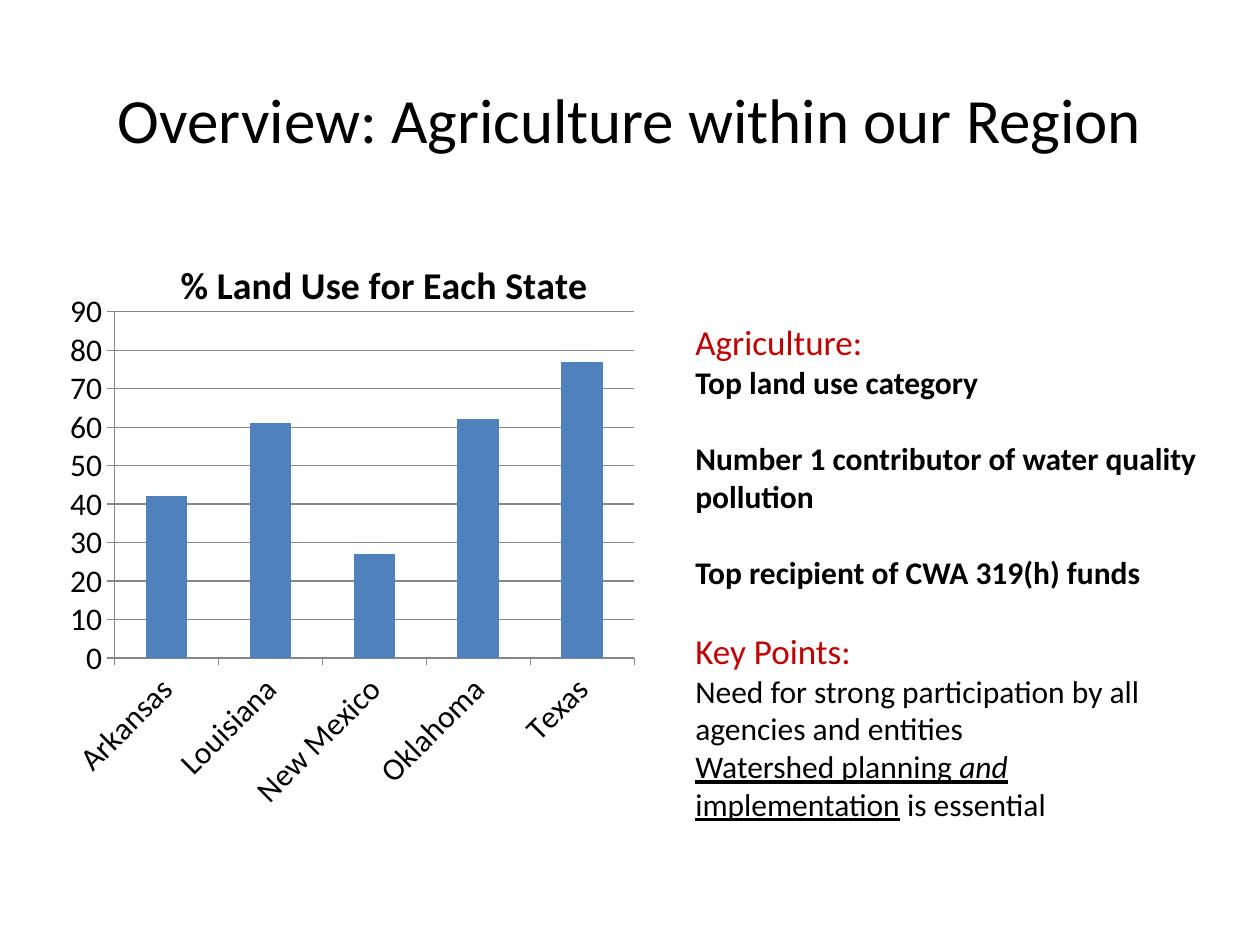
"""Build a slide on regional agriculture: a column chart of land use beside key points."""
from lxml import etree
from pptx import Presentation
from pptx import util as u
from pptx.chart.data import CategoryChartData
from pptx.dml.color import RGBColor
from pptx.enum import chart as charts, text
from pptx.oxml.ns import qn

FONT = "Calibri"
COLORS = {"text": "000000", "heading": "C00000", "column": "4F81BD", "axis": "868686"}
WIDTH, HEIGHT = 10, 7.5
TITLE = "Overview: Agriculture within our Region"
CHART_TITLE = "% Land Use for Each State"
LAND_USE = {"Arkansas": 42, "Louisiana": 61, "New Mexico": 27, "Oklahoma": 62, "Texas": 77}
STYLES = {
    "title": {"size": 36},
    "heading": {"size": 20, "color": "heading"},
    "strong": {"size": 18, "bold": True},
    "plain": {"size": 18},
    "underlined": {"size": 18, "underline": True},
    "emphasis": {"size": 18, "underline": True, "italic": True},
}
GAP = 22
POINTS = [
    (0, [("Agriculture:", "heading")]),
    (0, [("Top land use category", "strong")]),
    (GAP, [("Number 1 contributor of water quality pollution", "strong")]),
    (GAP, [("Top recipient of CWA 319(h) funds", "strong")]),
    (GAP, [("Key Points:", "heading")]),
    (0, [("Need for strong participation by all agencies and entities", "plain")]),
    (0, [("Watershed planning ", "underlined"), ("and", "emphasis"),
         (" implementation", "underlined"), (" is essential", "plain")]),
]
AREAS = {
    "title": (0.05, 0.04, 0.9, 0.17),
    "chart": (0.05, 0.233, 0.517, 0.66),
    "points": (0.542, 0.333, 0.425, 0.548),
}
PLOT_LAYOUT = {"layoutTarget": "inner", "xMode": "edge", "yMode": "edge",
               "x": 0.079, "y": 0.147, "w": 0.798, "h": 0.555}
TITLE_LAYOUT = {"xMode": "edge", "yMode": "edge", "x": 0.17, "y": 0.05}


def place(area):
    return [u.Inches(share * side) for share, side in zip(AREAS[area], (WIDTH, HEIGHT) * 2)]


def style_font(font, size, color="text", bold=False, italic=False, underline=False):
    font.name, font.size = FONT, u.Pt(size)
    font.bold, font.italic, font.underline = bold, italic, underline
    font.color.rgb = RGBColor.from_string(COLORS[color])


def add_text(slide, area, paragraphs, align, anchor):
    frame = slide.shapes.add_textbox(*place(area)).text_frame
    frame.word_wrap, frame.vertical_anchor = True, anchor
    for index, (gap, runs) in enumerate(paragraphs):
        paragraph = frame.add_paragraph() if index else frame.paragraphs[0]
        paragraph.alignment = align
        if gap:
            paragraph.space_before = u.Pt(gap)
        for words, style in runs:
            run = paragraph.add_run()
            run.text = words
            style_font(run.font, **STYLES[style])


def set_layout(parent, position, values):
    for old in parent.findall(qn("c:layout")):
        parent.remove(old)
    layout = etree.Element(qn("c:layout"))
    manual = etree.SubElement(layout, qn("c:manualLayout"))
    for name, value in values.items():
        etree.SubElement(manual, qn(f"c:{name}")).set("val", str(value))
    parent.insert(position, layout)


def add_land_use_chart(slide):
    data = CategoryChartData()
    data.categories = list(LAND_USE)
    data.add_series(CHART_TITLE, list(LAND_USE.values()))
    chart = slide.shapes.add_chart(
        charts.XL_CHART_TYPE.COLUMN_CLUSTERED, *place("chart"), data).chart
    style_font(chart.font, 18)
    chart.has_legend = False
    chart.has_title = True
    run = chart.chart_title.text_frame.paragraphs[0].add_run()
    run.text = CHART_TITLE
    style_font(run.font, 21.6, bold=True)
    set_layout(chart.chart_title._element, 1, TITLE_LAYOUT)
    set_layout(chart._chartSpace.chart.plotArea, 0, PLOT_LAYOUT)

    plot = chart.plots[0]
    plot.gap_width, plot.vary_by_categories = 150, False
    fill = plot.series[0].format.fill
    fill.solid()
    fill.fore_color.rgb = RGBColor.from_string(COLORS["column"])

    values, states = chart.value_axis, chart.category_axis
    values.minimum_scale, values.maximum_scale, values.major_unit = 0, 90, 10
    values.has_major_gridlines = True
    for axis in (values, states):
        axis.major_tick_mark = charts.XL_TICK_MARK.OUTSIDE
        axis.minor_tick_mark = charts.XL_TICK_MARK.NONE
        style_font(axis.tick_labels.font, 18)
    states._element.find(qn("c:txPr")).find(qn("a:bodyPr")).set("rot", "-2700000")
    for part in (values, states, values.major_gridlines):
        part.format.line.color.rgb = RGBColor.from_string(COLORS["axis"])
        part.format.line.width = u.Pt(0.75)


def main():
    presentation = Presentation()
    presentation.slide_width, presentation.slide_height = u.Inches(WIDTH), u.Inches(HEIGHT)
    slide = presentation.slides.add_slide(presentation.slide_layouts[6])
    add_text(slide, "title", [(0, [(TITLE, "title")])],
             text.PP_ALIGN.CENTER, text.MSO_ANCHOR.MIDDLE)
    add_land_use_chart(slide)
    add_text(slide, "points", POINTS, text.PP_ALIGN.LEFT, text.MSO_ANCHOR.TOP)
    presentation.save("out.pptx")


if __name__ == "__main__":
    main()
